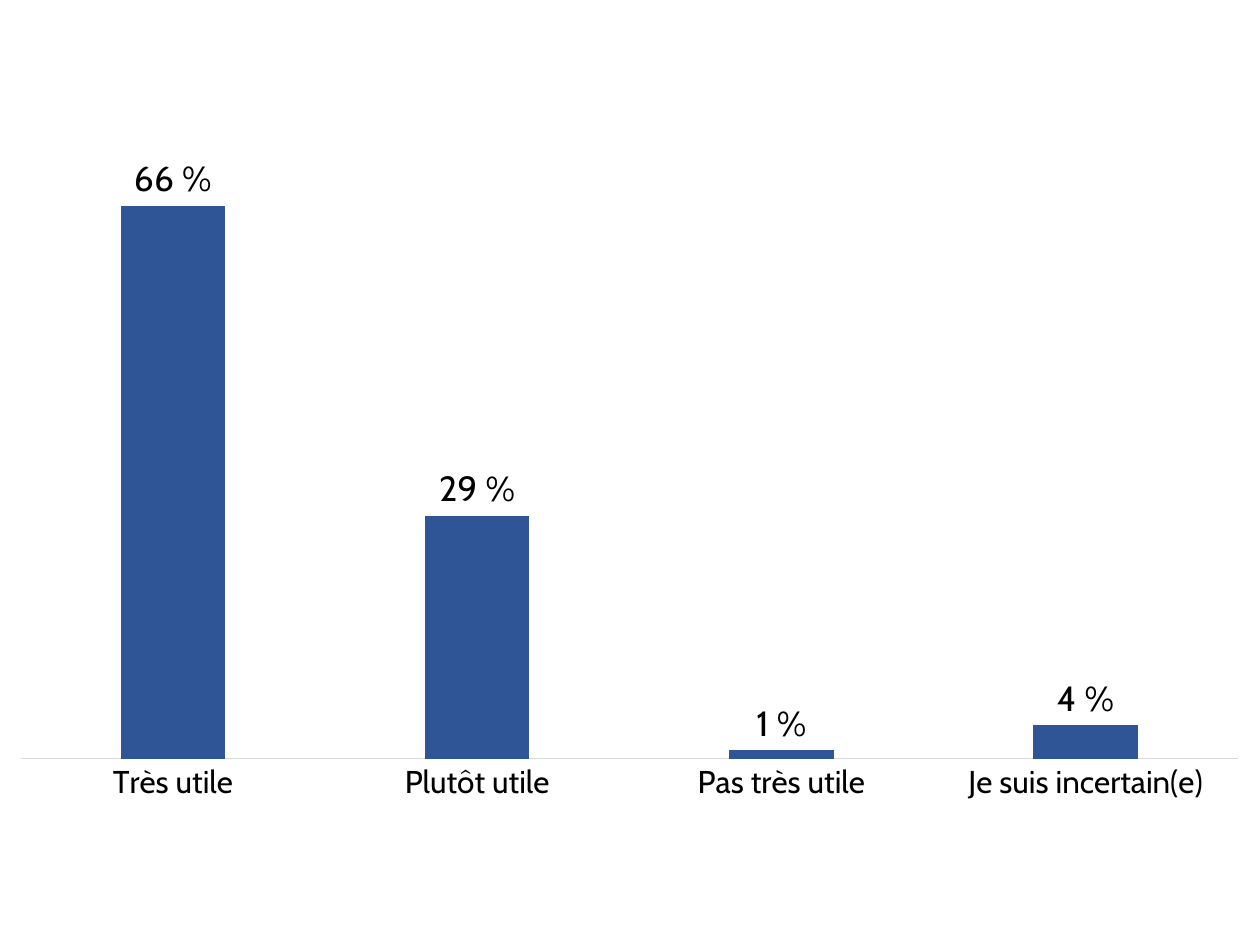
from lxml.etree import SubElement
from pptx import Presentation
from pptx.chart.data import CategoryChartData
from pptx.dml.color import RGBColor
from pptx.enum.chart import XL_CHART_TYPE as ChartType
from pptx.enum.chart import XL_LABEL_POSITION as LabelPosition
from pptx.enum.chart import XL_TICK_MARK as TickMark
from pptx.oxml.ns import qn
from pptx.util import Inches, Pt

BLACK = RGBColor(0x00, 0x00, 0x00)
BLUE = RGBColor(0x2F, 0x55, 0x97)
LIGHT_GREY = RGBColor(0xD9, 0xD9, 0xD9)
FONT_NAME = "Cabin"
PERCENT_FORMAT = "###0%"
BLANK_LAYOUT = 6

ANSWERS = {
    "Très utile": 0.66,
    "Plutôt utile": 0.29,
    "Pas très utile": 0.01,
    "Je suis incertain(e)": 0.04,
}


def style_font(font, size):
    font.name = FONT_NAME
    font.size = Pt(size)
    font.bold = False
    font.color.rgb = BLACK


def set_plot_area(chart, **fractions):
    """Place the inner plot area by fractions of the chart's size."""
    plot_area = chart._chartSpace.chart.plotArea
    layout = plot_area.find(qn("c:layout"))
    if layout is None:
        layout = SubElement(plot_area, qn("c:layout"))
        plot_area.insert(0, layout)
    manual = SubElement(layout, qn("c:manualLayout"))
    settings = {"layoutTarget": "inner", "xMode": "edge", "yMode": "edge", **fractions}
    for name, value in settings.items():
        SubElement(manual, qn(f"c:{name}")).set("val", str(value))


def style_axes(chart):
    category_axis = chart.category_axis
    category_axis.major_tick_mark = TickMark.NONE
    category_axis.minor_tick_mark = TickMark.NONE
    category_axis.format.line.color.rgb = LIGHT_GREY
    category_axis.format.line.width = Pt(0.75)
    style_font(category_axis.tick_labels.font, 18)

    value_axis = chart.value_axis
    value_axis.visible = False
    value_axis.has_major_gridlines = False
    value_axis.minimum_scale = 0
    value_axis.maximum_scale = 0.7
    value_axis.tick_labels.number_format = PERCENT_FORMAT
    value_axis.tick_labels.number_format_is_linked = False


def add_labels(plot, series):
    """Label each column with its percentage, spaced in the French manner."""
    plot.has_data_labels = True
    labels = series.data_labels
    labels.show_value = True
    labels.position = LabelPosition.OUTSIDE_END
    labels.number_format = PERCENT_FORMAT
    labels.number_format_is_linked = False
    style_font(labels.font, 20)
    for index, value in enumerate(series.values):
        label = series.points[index].data_label
        run = label.text_frame.paragraphs[0].add_run()
        run.text = f"{value * 100:.0f} %"
        style_font(run.font, 20)
        label.position = LabelPosition.OUTSIDE_END


def add_column_chart(slide, answers):
    data = CategoryChartData(number_format=PERCENT_FORMAT)
    data.categories = list(answers)
    data.add_series("Series 1", list(answers.values()))
    chart = slide.shapes.add_chart(
        ChartType.COLUMN_CLUSTERED,
        Inches(0.16), Inches(0.76), Inches(9.67), Inches(6.2), data,
    ).chart
    chart.has_title = False
    chart.has_legend = False
    style_font(chart.font, 10)
    set_plot_area(chart, x=0, y=0.098, w=1, h=0.751)
    style_axes(chart)

    plot = chart.plots[0]
    plot.gap_width = 191
    plot.overlap = -27
    plot.vary_by_categories = False
    series = plot.series[0]
    series.format.fill.solid()
    series.format.fill.fore_color.rgb = BLUE
    add_labels(plot, series)


def main():
    presentation = Presentation()
    presentation.slide_width = Inches(10)
    presentation.slide_height = Inches(7.5)
    slide = presentation.slides.add_slide(presentation.slide_layouts[BLANK_LAYOUT])
    add_column_chart(slide, ANSWERS)
    presentation.save("out.pptx")


if __name__ == "__main__":
    main()
